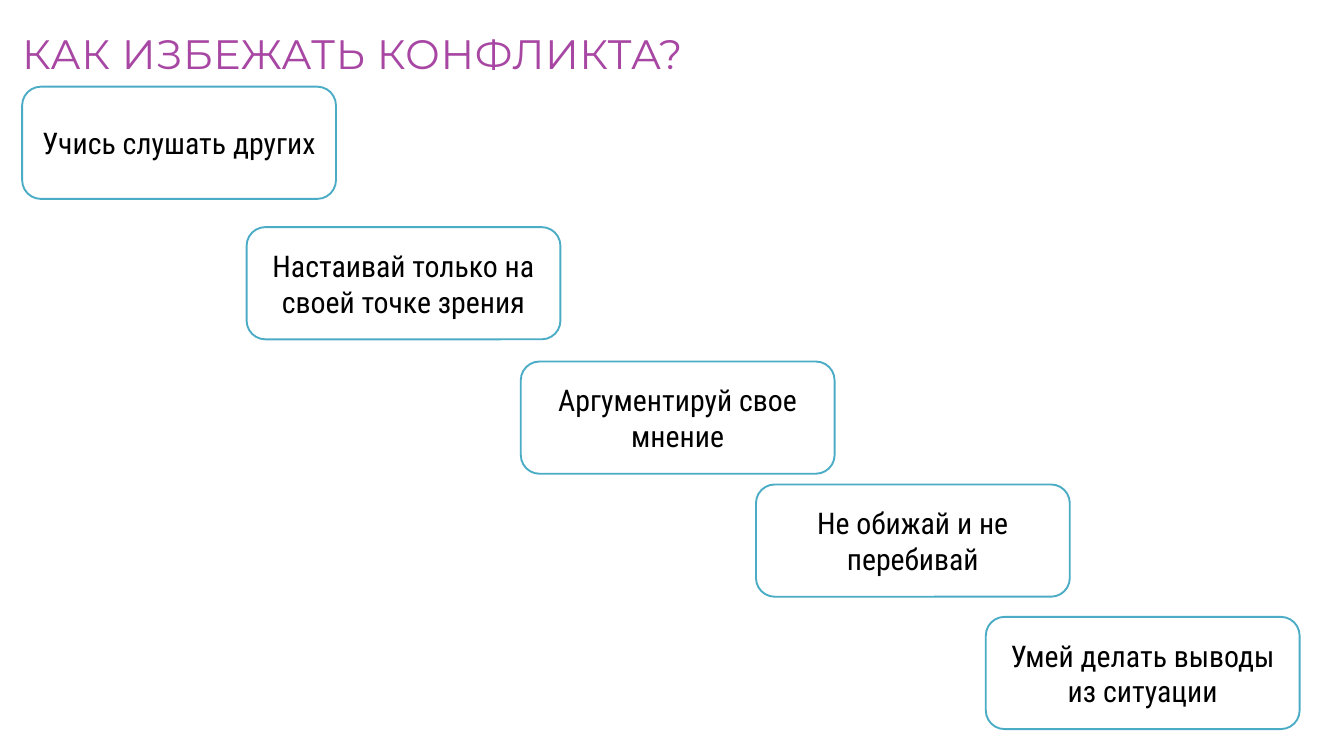
from pptx import Presentation
from pptx.dml.color import RGBColor
from pptx.enum.shapes import MSO_SHAPE
from pptx.enum.text import MSO_ANCHOR, MSO_AUTO_SIZE, PP_ALIGN
from pptx.util import Inches, Pt

PURPLE = RGBColor(0xA8, 0x47, 0xA3)
TEAL = RGBColor(0x4B, 0xAC, 0xC6)
BLACK = RGBColor(0, 0, 0)
WHITE = RGBColor(0xFF, 0xFF, 0xFF)

ROUND = MSO_SHAPE.ROUNDED_RECTANGLE
TOP, MIDDLE = MSO_ANCHOR.TOP, MSO_ANCHOR.MIDDLE
LEFT, CENTER = PP_ALIGN.LEFT, PP_ALIGN.CENTER
NO_FIT = MSO_AUTO_SIZE.NONE

TITLE_ONLY = 5
CARD_W, CARD_H = 4.67, 1.67

TIPS = [
    ("Учись слушать других", 0.33, 1.29),
    ("Настаивай только на своей точке зрения", 3.67, 3.38),
    ("Аргументируй свое мнение", 7.75, 5.38),
    ("Не обижай и не перебивай", 11.25, 7.21),
    ("Умей делать выводы из ситуации", 14.67, 9.18),
]


class Deck:
    """Holds the style and the current slide."""

    head_font, head_size = "Montserrat", 44
    body_font, body_size = "Roboto Condensed", 32

    def __init__(self, prs):
        self.slide = prs.slides.add_slide(prs.slide_layouts[TITLE_ONLY])
        fill = self.slide.background.fill
        fill.solid()
        fill.fore_color.rgb = WHITE

    def set_text(self, frame, text, font, size, color, align):
        frame.word_wrap = True
        frame.text = text
        para = frame.paragraphs[0]
        para.alignment = align
        run = para.runs[0]
        run.font.name = font
        run.font.size = Pt(size)
        run.font.color.rgb = color
        return para

    def title(self, text, x, y, w, h):
        shape = self.slide.shapes.title
        shape.left, shape.top = Inches(x), Inches(y)
        shape.width, shape.height = Inches(w), Inches(h)
        frame = shape.text_frame
        frame.auto_size = NO_FIT
        frame.vertical_anchor = TOP
        frame.margin_left = frame.margin_right = 0
        frame.margin_top = frame.margin_bottom = 0
        para = self.set_text(frame, text, self.head_font, self.head_size,
                             PURPLE, LEFT)
        para.space_before = Pt(0)
        para.line_spacing = Pt(56.4)
        # Letter spacing in hundredths of a point
        para.runs[0].font._element.set("spc", "60")

    def card(self, text, x, y):
        shape = self.slide.shapes.add_shape(
            ROUND, Inches(x), Inches(y), Inches(CARD_W), Inches(CARD_H))
        shape.shadow.inherit = False
        shape.fill.solid()
        shape.fill.fore_color.rgb = WHITE
        shape.line.color.rgb = TEAL
        shape.line.width = Pt(2)
        shape.text_frame.vertical_anchor = MIDDLE
        self.set_text(shape.text_frame, text, self.body_font, self.body_size,
                      BLACK, CENTER)


def main():
    prs = Presentation()
    prs.slide_width, prs.slide_height = Inches(20), Inches(11.25)
    deck = Deck(prs)
    deck.title("КАК ИЗБЕЖАТЬ КОНФЛИКТА?", 0.33, 0.38, 20.32, 0.75)
    for text, x, y in TIPS:
        deck.card(text, x, y)
    prs.save("out.pptx")


if __name__ == "__main__":
    main()
